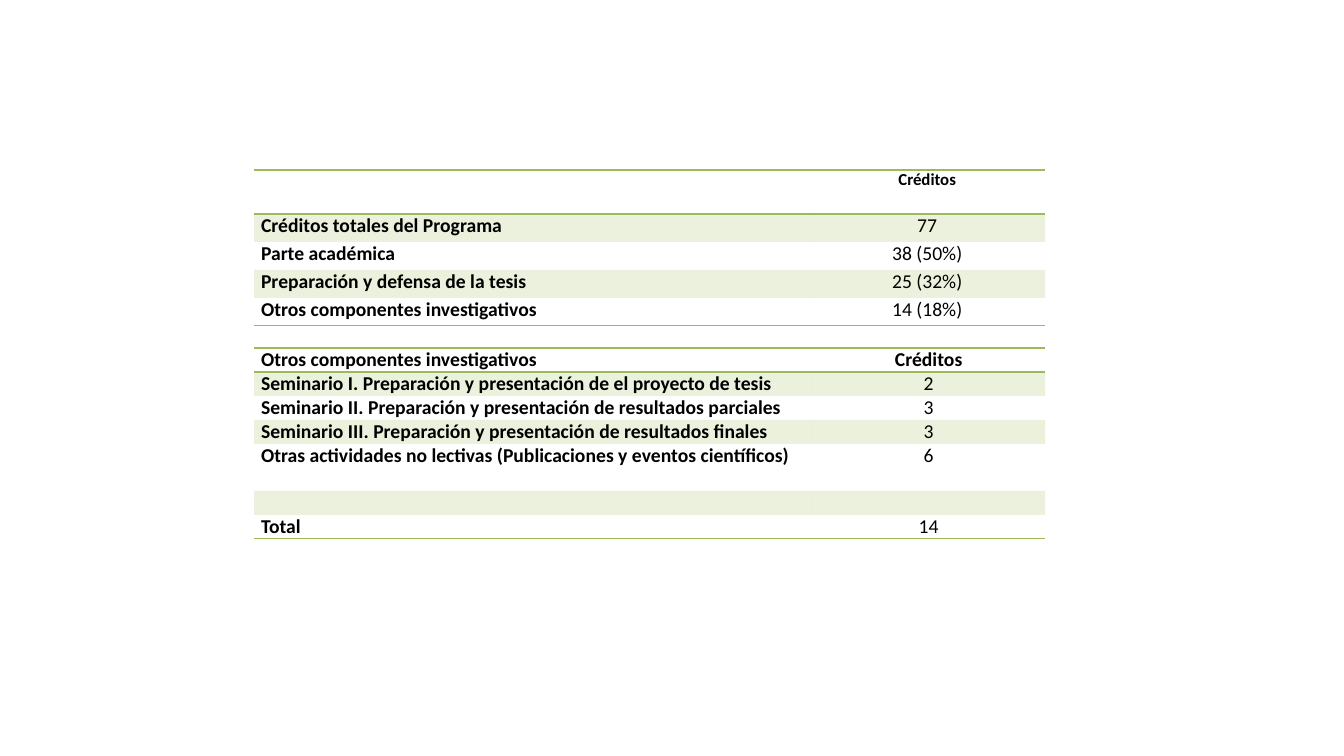
import pptx
import pptx.dml.color
import pptx.enum.text
import pptx.oxml.ns
import pptx.util
from lxml import etree

PX = 914400 / 100.8
GREEN = pptx.dml.color.RGBColor(0x9B, 0xBB, 0x59)
BLACK = pptx.dml.color.RGBColor(0, 0, 0)
BAND_ALPHA = "20000"
FONT = "Calibri"
BODY_SIZE = 14
qn = pptx.oxml.ns.qn

PROGRAM_ROWS = [
    ("", "Créditos"),
    ("Créditos totales del Programa", "77"),
    ("Parte académica", "38 (50%)"),
    ("Preparación y defensa de la tesis", "25 (32%)"),
    ("Otros componentes investigativos", "14 (18%)"),
]
RESEARCH_ROWS = [
    ("Otros componentes investigativos", "Créditos"),
    ("Seminario I. Preparación y presentación de el proyecto de tesis", "2"),
    ("Seminario II. Preparación y presentación de resultados parciales", "3"),
    ("Seminario III. Preparación y presentación de resultados finales", "3"),
    ("Otras actividades no lectivas (Publicaciones y eventos científicos)", "6"),
    ("", ""),
    ("Total", "14"),
]


def px(length):
    return pptx.util.Emu(round(length * PX))


def set_borders(cell, ruled_sides):
    properties = cell._tc.get_or_add_tcPr()
    for side in ("L", "R", "T", "B"):
        line = etree.SubElement(properties, qn(f"a:ln{side}"))
        if side in ruled_sides:
            line.set("w", str(pptx.util.Pt(1)))
            fill = etree.SubElement(line, qn("a:solidFill"))
            etree.SubElement(fill, qn("a:srgbClr"), val=str(GREEN))
        else:
            line.set("w", "0")
            etree.SubElement(line, qn("a:noFill"))


def set_fill(cell, banded):
    if not banded:
        cell.fill.background()
        return
    cell.fill.solid()
    cell.fill.fore_color.rgb = GREEN
    color = cell._tc.tcPr.find(qn("a:solidFill")).find(qn("a:srgbClr"))
    etree.SubElement(color, qn("a:alpha"), val=BAND_ALPHA)


def set_text(cell, text, size, bold, alignment):
    cell.margin_left = cell.margin_right = px(7)
    cell.margin_top = cell.margin_bottom = 0
    paragraph = cell.text_frame.paragraphs[0]
    paragraph.alignment = alignment
    paragraph.font.name = FONT
    paragraph.font.size = pptx.util.Pt(size)
    paragraph.font.bold = bold
    paragraph.font.color.rgb = BLACK
    if text:
        paragraph.add_run().text = text
    else:
        etree.SubElement(paragraph._p, qn("a:endParaRPr"), sz=str(size * 100))


def add_credit_table(slide, top, widths, heights, rows, header_size):
    frame = slide.shapes.add_table(
        len(rows), len(widths), px(254), px(top), px(sum(widths)), px(sum(heights))
    )
    table = frame.table
    table.first_row = table.horz_banding = False
    for column, width in zip(table.columns, widths):
        column.width = px(width)
    align = pptx.enum.text.PP_ALIGN
    last = len(rows) - 1
    for r, (texts, height) in enumerate(zip(rows, heights)):
        table.rows[r].height = px(height)
        ruled_sides = {0: "TB", 1: "T", last: "B"}.get(r, "")
        for c, text in enumerate(texts):
            cell = table.cell(r, c)
            set_borders(cell, ruled_sides)
            set_fill(cell, r % 2 == 1)
            set_text(
                cell,
                text,
                header_size if r == 0 else BODY_SIZE,
                r == 0 or c == 0,
                align.CENTER if c else align.JUSTIFY,
            )


def main():
    presentation = pptx.Presentation()
    presentation.slide_width = pptx.util.Inches(13.33)
    presentation.slide_height = pptx.util.Inches(7.5)
    slide = presentation.slides.add_slide(presentation.slide_layouts[6])
    add_credit_table(slide, 170, (555, 236), [44] + [28] * 4, PROGRAM_ROWS, 12)
    research_heights = [24] * 4 + [47] + [24] * 2
    add_credit_table(slide, 348, (558, 233), research_heights, RESEARCH_ROWS, BODY_SIZE)
    presentation.save("out.pptx")


if __name__ == "__main__":
    main()
